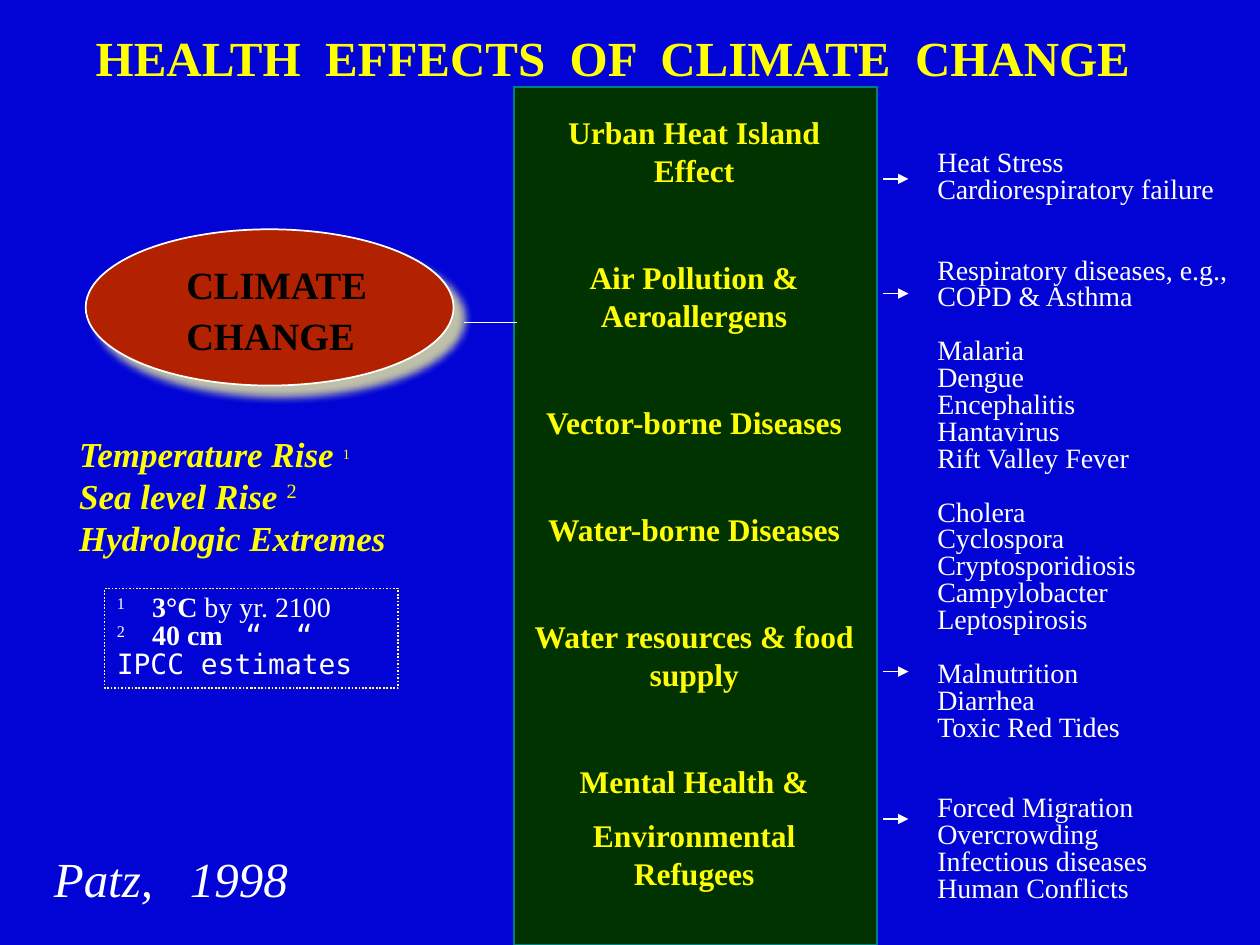
from lxml.etree import SubElement
from pptx import Presentation
from pptx.dml.color import RGBColor
from pptx.enum.dml import MSO_LINE
from pptx.enum.shapes import MSO_CONNECTOR, MSO_SHAPE
from pptx.enum.text import MSO_ANCHOR, MSO_AUTO_SIZE, PP_ALIGN
from pptx.oxml.ns import qn
from pptx.util import Inches, Pt

BLUE = RGBColor(0x01, 0x04, 0xD5)
RED = RGBColor(0xB2, 0x22, 0x00)
GREEN = RGBColor(0x00, 0x33, 0x00)
TEAL = RGBColor(0x00, 0x80, 0x80)
YELLOW = RGBColor(0xFF, 0xFF, 0x00)
GOLD = RGBColor(0xFF, 0xFE, 0x06)
CREAM = RGBColor(0xFF, 0xFF, 0x99)
WHITE = RGBColor(0xFF, 0xFF, 0xFF)
BLACK = RGBColor(0, 0, 0)
SERIF, MONO = "Times New Roman", "DejaVu Sans Mono"

TITLE = "HEALTH  EFFECTS  OF  CLIMATE  CHANGE"
# Each run: text, then the font settings that differ from its paragraph
SIGNS = [
    [("Temperature Rise ", {}),
     ("1", {"size": Pt(14), "bold": False, "italic": False, "raised": True})],
    [("Sea level Rise ", {}),
     ("2", {"bold": False, "italic": False, "raised": True})],
    [("Hydrologic Extremes", {})],
]
NOTES = [
    [("1\t", {"raised": True}), ("3°C ", {"bold": True}), ("by yr. 2100", {})],
    [("2\t", {"raised": True}), ("40 cm", {"bold": True}),
     ("\t“\t“", {"name": MONO})],
    [("IPCC estimates", {"name": MONO})],
]
PATHWAYS = [
    ["Urban Heat Island Effect"],
    ["Air Pollution & Aeroallergens"],
    ["Vector-borne Diseases"],
    ["Water-borne Diseases"],
    ["Water resources & food supply"],
    ["Mental Health &", "Environmental Refugees"],
]
# Blank lines above each group, then its outcomes
OUTCOMES = [
    (0, ["Heat Stress", "Cardiorespiratory failure"]),
    (2, ["Respiratory diseases, e.g., COPD & Asthma"]),
    (1, ["Malaria", "Dengue", "Encephalitis", "Hantavirus",
         "Rift Valley Fever"]),
    (1, ["Cholera", "Cyclospora", "Cryptosporidiosis", "Campylobacter",
         "Leptospirosis"]),
    (1, ["Malnutrition", "Diarrhea", "Toxic Red Tides"]),
    (2, ["Forced Migration", "Overcrowding", "Infectious diseases",
         "Human Conflicts"]),
]
ARROWS = [1.42, 2.33, 5.33, 6.5]


def style(font, raised=False, color=None, **look):
    for key, value in look.items():
        setattr(font, key, value)
    if color is not None:
        font.color.rgb = color


def write(frame, lines, size, color, gaps=None, spacing=1.0,
          align=PP_ALIGN.LEFT, tabs=(), **look):
    """Fill a frame; a line is a string or a list of runs, gaps are points."""
    frame.word_wrap = True
    frame.auto_size = MSO_AUTO_SIZE.NONE
    frame.vertical_anchor = MSO_ANCHOR.TOP
    for i, line in enumerate(lines):
        para = frame.paragraphs[0] if i == 0 else frame.add_paragraph()
        para.alignment = align
        para.line_spacing = spacing
        para.space_before = Pt(gaps[i] if gaps else 0)
        if tabs:
            stops = SubElement(para._p.get_or_add_pPr(), qn("a:tabLst"))
            for stop in tabs:
                SubElement(stops, qn("a:tab"), pos=str(Inches(stop)), algn="l")
        style(para.font, name=SERIF, size=Pt(size), color=color, **look)
        for text, extra in [(line, {})] if isinstance(line, str) else line:
            run = para.add_run()
            run.text = text
            style(run.font, **extra)
            if extra.get("raised"):
                run._r.get_or_add_rPr().set("baseline", "30000")


def add_text(slide, box, *args, **look):
    shape = slide.shapes.add_textbox(*map(Inches, box))
    write(shape.text_frame, *args, **look)
    return shape


def add_block(slide, kind, box, fill, line):
    shape = slide.shapes.add_shape(kind, *map(Inches, box))
    shape.shadow.inherit = False
    shape.fill.solid()
    shape.fill.fore_color.rgb = fill
    shape.line.color.rgb = line
    shape.line.width = Pt(1)
    return shape


def add_glow(shape):
    """Give the shape a soft cream shadow to the lower right."""
    effects = shape._element.spPr.find(qn("a:effectLst"))
    shadow = SubElement(effects, qn("a:outerShdw"), blurRad=str(Pt(5)),
                        dist=str(Pt(8.5)), dir="2700000", algn="ctr",
                        rotWithShape="0")
    tint = SubElement(shadow, qn("a:srgbClr"), val=str(CREAM))
    SubElement(tint, qn("a:alpha"), val="75000")


def add_line(slide, left, right, y, arrow=False):
    line = slide.shapes.add_connector(
        MSO_CONNECTOR.STRAIGHT, *map(Inches, (left, y, right, y)))
    line.line.color.rgb = WHITE
    line.line.width = Pt(1)
    if arrow:
        SubElement(line.line._get_or_add_ln(), qn("a:tailEnd"),
                   type="triangle")
    SubElement(line._element.spPr, qn("a:effectLst"))


def main():
    deck = Presentation()
    deck.slide_width, deck.slide_height = Inches(10), Inches(7.5)
    slide = deck.slides.add_slide(deck.slide_layouts[5])
    slide.background.fill.solid()
    slide.background.fill.fore_color.rgb = BLUE

    title = slide.shapes.title
    title.left, title.top, title.width, title.height = map(
        Inches, (0.66, 0.17, 9.26, 0.56))
    write(title.text_frame, [TITLE], 28, YELLOW, bold=True)

    oval = add_block(slide, MSO_SHAPE.OVAL, (0.68, 1.82, 2.92, 1.24),
                     RED, WHITE)
    add_glow(oval)
    add_text(slide, (1.38, 2.12, 2.29, 0.8), ["CLIMATE", "CHANGE"], 22, BLACK,
             gaps=[11, 11], spacing=0.7, bold=True)
    add_text(slide, (0.53, 3.38, 3.57, 1.1), SIGNS, 20, YELLOW,
             bold=True, italic=True)

    add_block(slide, MSO_SHAPE.RECTANGLE, (4.08, 0.69, 2.88, 6.81),
              GREEN, TEAL)
    lines = [line for group in PATHWAYS for line in group]
    gaps = [9 if i else 39.6 for group in PATHWAYS for i in range(len(group))]
    add_text(slide, (4.11, 0.85, 2.8, 6.6), lines, 18, GOLD,
             gaps=[0] + gaps[1:], align=PP_ALIGN.CENTER, bold=True)

    add_line(slide, 3.68, 4.1, 2.56)
    for y in ARROWS:
        add_line(slide, 7.01, 7.21, y, arrow=True)

    lines = [line for _, group in OUTCOMES for line in group]
    gaps = [0 if i else blank * 15.36
            for blank, group in OUTCOMES for i in range(len(group))]
    add_text(slide, (7.34, 1.15, 2.55, 6.3), lines, 16, WHITE,
             gaps=gaps, spacing=0.8)

    notes = add_text(slide, (0.83, 4.67, 2.33, 0.79), NOTES, 16, WHITE,
                     spacing=0.85, tabs=(0.28, 1.02, 1.42))
    notes.line.color.rgb = CREAM
    notes.line.width = Pt(1)
    notes.line.dash_style = MSO_LINE.ROUND_DOT
    add_text(slide, (0.33, 6.89, 3.86, 0.6), ["Patz,\t1998"], 28, WHITE,
             spacing=0.5, tabs=(1.08,), italic=True)
    deck.save("out.pptx")


if __name__ == "__main__":
    main()
